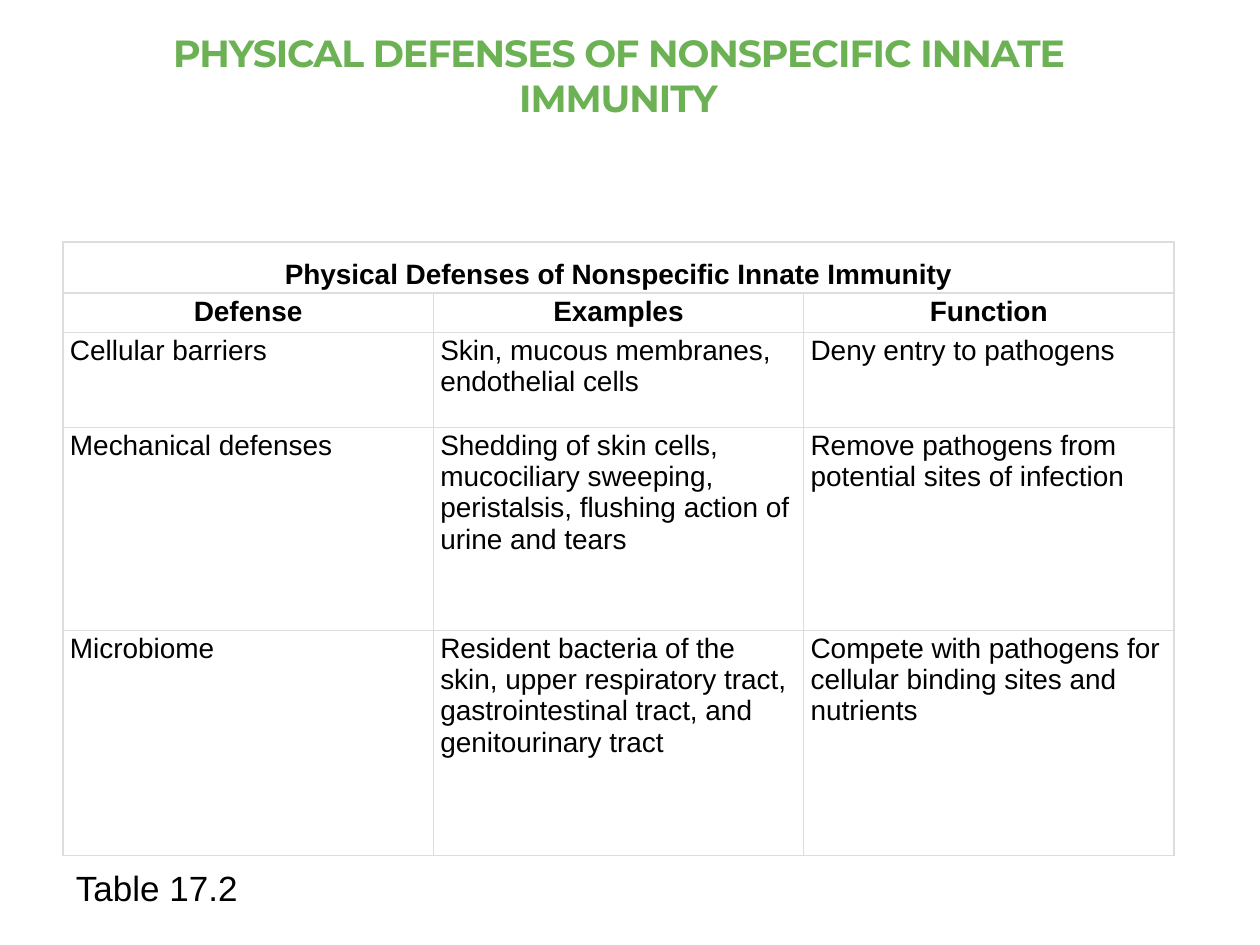
from lxml.etree import SubElement
from pptx import Presentation
from pptx.dml.color import RGBColor
from pptx.enum.text import MSO_ANCHOR, PP_ALIGN
from pptx.oxml.ns import qn
from pptx.util import Pt

PX = 914400 // 126
COLORS = {"title": "6CB255", "text": "000000", "cell": "FFFFFF", "border": "DDDDDD"}
ROWS = [
    ["Physical Defenses of Nonspecific Innate Immunity"],
    ["Defense", "Examples", "Function"],
    ["Cellular barriers", "Skin, mucous membranes, endothelial cells", "Deny entry to pathogens"],
    ["Mechanical defenses",
     "Shedding of skin cells, mucociliary sweeping, peristalsis, flushing action of urine and tears",
     "Remove pathogens from potential sites of infection"],
    ["Microbiome",
     "Resident bacteria of the skin, upper respiratory tract, gastrointestinal tract, and genitourinary tract",
     "Compete with pathogens for cellular binding sites and nutrients"],
]
ROW_HEIGHTS = [51, 38, 95, 203, 225]
HEADER_ROWS = 2


def px(n):
    return n * PX


def rgb(name):
    return RGBColor.from_string(COLORS[name])


def write(tf, text, size=16, font="Arial", color="text", bold=False,
          align=PP_ALIGN.LEFT, spacing=None):
    p = tf.paragraphs[0]
    p.alignment = align
    r = p.add_run()
    r.text = text
    r.font.size, r.font.name, r.font.bold = Pt(size), font, bold
    r.font.color.rgb = rgb(color)
    if spacing is not None:
        r.font._element.set("spc", str(round(spacing * 100)))


class Deck:
    """Holds the presentation style and the current slide."""

    def __init__(self, width, height):
        self.prs = Presentation()
        self.prs.slide_width, self.prs.slide_height = px(width), px(height)
        self.s = self.prs.slides.add_slide(self.prs.slide_layouts[6])

    def text(self, x, y, w, h, text, anchor=MSO_ANCHOR.TOP, top=0, bottom=0, **style):
        tf = self.s.shapes.add_textbox(px(x), px(y), px(w), px(h)).text_frame
        tf.word_wrap = True
        tf.vertical_anchor = anchor
        tf.margin_left = tf.margin_right = px(13)
        tf.margin_top, tf.margin_bottom = px(top), px(bottom)
        write(tf, text, **style)

    def border(self, cell):
        tcPr = cell._tc.get_or_add_tcPr()
        for i, side in enumerate(("lnL", "lnR", "lnT", "lnB")):
            ln = tcPr.makeelement(qn(f"a:{side}"), {"w": str(Pt(1))})
            fill = SubElement(ln, qn("a:solidFill"))
            SubElement(fill, qn("a:srgbClr"), val=COLORS["border"])
            tcPr.insert(i, ln)

    def table(self, x, y, w, rows, heights, header_rows):
        cols = max(map(len, rows))
        table = self.s.shapes.add_table(
            len(rows), cols, px(x), px(y), px(w), px(sum(heights))).table
        for col in table.columns:
            col.width = px(w) // cols
        for i, (texts, height) in enumerate(zip(rows, heights)):
            table.rows[i].height = px(height)
            header = i < header_rows
            for j in range(cols):
                cell = table.cell(i, j)
                cell.fill.solid()
                cell.fill.fore_color.rgb = rgb("cell")
                cell.margin_left = cell.margin_right = px(7)
                cell.margin_top = cell.margin_bottom = px(3)
                self.border(cell)
                if j < len(texts):
                    write(cell.text_frame, texts[j], bold=header,
                          align=PP_ALIGN.CENTER if header else PP_ALIGN.LEFT)
            if len(texts) == 1:
                table.cell(i, 0).merge(table.cell(i, cols - 1))
                table.cell(i, 0).vertical_anchor = MSO_ANCHOR.BOTTOM


def main():
    deck = Deck(1260, 945)
    deck.text(63, 33, 1111, 91, "PHYSICAL DEFENSES OF NONSPECIFIC INNATE IMMUNITY",
              anchor=MSO_ANCHOR.BOTTOM, bottom=4, size=21.6, font="Montserrat",
              color="title", bold=True, align=PP_ALIGN.CENTER, spacing=-0.6)
    deck.text(63, 858, 1111, 53, "Table 17.2", top=9, size=20)
    deck.table(63, 242, 1111, ROWS, ROW_HEIGHTS, HEADER_ROWS)
    deck.prs.save("out.pptx")


if __name__ == "__main__":
    main()
